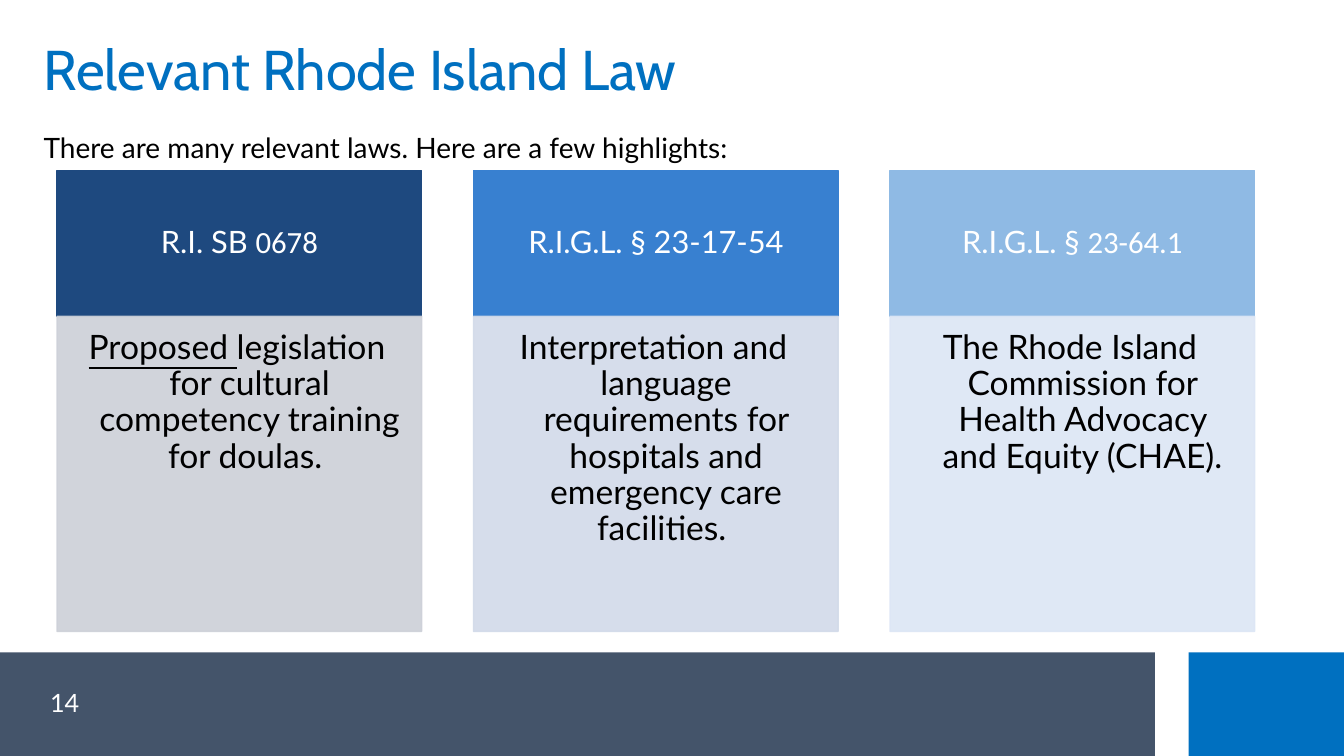
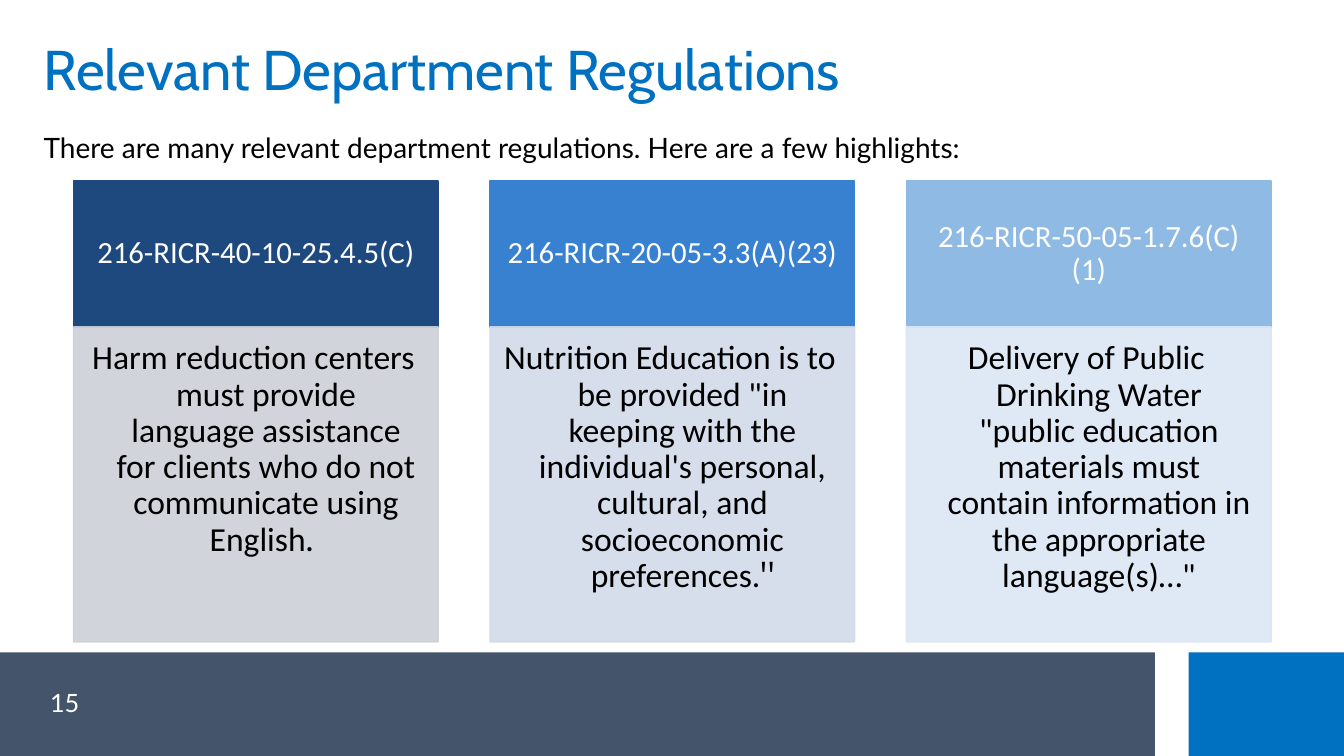
"""Build two slides of legal highlights, each with three headed cards."""
import pptx
import pptx.dml.color
import pptx.enum.shapes
import pptx.enum.text
import pptx.oxml
import pptx.oxml.ns
import pptx.util

Pt = pptx.util.Pt
RGBColor = pptx.dml.color.RGBColor
ANCHOR = pptx.enum.text.MSO_ANCHOR
ALIGN = pptx.enum.text.PP_ALIGN

WHITE = RGBColor(0xFF, 0xFF, 0xFF)
BLACK = RGBColor(0x00, 0x00, 0x00)
BLUE = RGBColor(0x00, 0x70, 0xC0)
SLATE = RGBColor(0x44, 0x54, 0x6A)
HEAD_COLORS = [
    RGBColor(0x1E, 0x49, 0x7F),
    RGBColor(0x38, 0x80, 0xD0),
    RGBColor(0x8F, 0xBA, 0xE4),
]
BODY_COLORS = [
    RGBColor(0xCD, 0xD0, 0xD8),
    RGBColor(0xD2, 0xDA, 0xE9),
    RGBColor(0xDC, 0xE6, 0xF5),
]

PLAIN, HEADING, OFFICE = "Lato", "Cabin", "Calibri"

SLIDES = [
    {
        "number": "14",
        "title": "Relevant Rhode Island Law",
        "intro": "There are many relevant laws. Here are a few highlights:",
        "origin": (40.75, 121.75),
        "cards": [
            (
                [("R.I. SB ", PLAIN), ("0678", OFFICE)],
                [
                    ("Proposed ", PLAIN, True),
                    ("legislation for cultural competency training for doulas. ", PLAIN),
                ],
            ),
            (
                [("R.I.G.L. § 23-17-54", PLAIN)],
                [(
                    "Interpretation and language requirements for hospitals "
                    "and emergency care facilities. ", PLAIN,
                )],
            ),
            (
                [("R.I.G.L. § ", PLAIN), ("23-64.1", OFFICE)],
                [(
                    "The Rhode Island Commission for Health Advocacy "
                    "and Equity (CHAE).", PLAIN,
                )],
            ),
        ],
    },
    {
        "number": "15",
        "title": "Relevant Department Regulations",
        "intro": "There are many relevant department regulations. Here are a few highlights:",
        "origin": (52.5, 129.25),
        "cards": [
            (
                [("216-RICR-40-10-25.4.5(C)", OFFICE)],
                [
                    (
                        "Harm reduction centers must provide language assistance "
                        "for clients who do not communicate using English", OFFICE,
                    ),
                    (". ", PLAIN),
                ],
            ),
            (
                [("216-RICR-20-05-3.3(A)(23)", OFFICE)],
                [
                    (
                        "Nutrition Education is to be provided \"in keeping with the "
                        "individual's personal, cultural, and socioeconomic "
                        "preferences.", OFFICE,
                    ),
                    ('"', HEADING),
                ],
            ),
            (
                [("216-RICR-50-05-1.7.6(C)(1)", OFFICE)],
                [(
                    'Delivery of Public Drinking Water "public education materials '
                    'must contain information in the appropriate language(s)…"', OFFICE,
                )],
            ),
        ],
    },
]

BANDS = [(0, 825, SLATE), (849, 111, BLUE)]
BAND_TOP, BAND_HEIGHT = 466, 74
CARD_WIDTH, CARD_STEP = 260.5, 297.5
HEAD_HEIGHT, BODY_HEIGHT = 104.25, 225
HEAD_INSETS = (12.25, 7.25, 12.25, 7.25)
BODY_INSETS = (10, 10, 13.5, 15)
BOX_INSETS = (7.2, 3.6, 7.2, 3.6)
HANGING = 18
BODY_OPACITY = 90


def set_text(shape, spans, size, color, insets=BOX_INSETS, anchor=ANCHOR.TOP,
             align=ALIGN.LEFT, spacing=1.0, hanging=0):
    frame = shape.text_frame
    frame.word_wrap = True
    frame.vertical_anchor = anchor
    frame.margin_left, frame.margin_top, frame.margin_right, frame.margin_bottom = map(Pt, insets)
    para = frame.paragraphs[0]
    para.alignment = align
    para.line_spacing = spacing
    if hanging:
        properties = para._p.get_or_add_pPr()
        properties.set("marL", str(Pt(hanging)))
        properties.set("indent", str(-Pt(hanging)))
    for text, font, *underline in spans:
        span = para.add_run()
        span.text = text
        span.font.name = font
        span.font.size = Pt(size)
        span.font.color.rgb = color
        if underline:
            span.font.underline = True


def add_box(page, area, spans, size, color, **style):
    box = page.shapes.add_textbox(*map(Pt, area))
    set_text(box, spans, size, color, **style)


def add_panel(page, area, color, outlined=False, opacity=100):
    panel = page.shapes.add_shape(pptx.enum.shapes.MSO_SHAPE.RECTANGLE, *map(Pt, area))
    panel.shadow.inherit = False
    panel.fill.solid()
    panel.fill.fore_color.rgb = color
    if outlined:
        panel.line.color.rgb = color
        panel.line.width = Pt(1)
    else:
        panel.line.fill.background()
    if opacity < 100:
        for tint in panel._element.spPr.iter(pptx.oxml.ns.qn("a:srgbClr")):
            alpha = tint.makeelement(pptx.oxml.ns.qn("a:alpha"), {"val": str(opacity * 1000)})
            tint.append(alpha)
    return panel


def add_frame(page, content):
    for left, width, color in BANDS:
        add_panel(page, (left, BAND_TOP, width, BAND_HEIGHT), color)
    add_box(page, (24, 487.5, 44.5, 26.5), [(content["number"], PLAIN)], 18, WHITE,
            align=ALIGN.CENTER)
    add_box(page, (24, 26, 912, 52), [(content["title"], HEADING)], 40, BLUE,
            anchor=ANCHOR.MIDDLE, spacing=0.9)
    add_box(page, (24, 84, 912, 67), [(content["intro"], PLAIN)], 20, BLACK, spacing=1.23)


def add_cards(page, content):
    origin_left, top = content["origin"]
    for index, (head, body) in enumerate(content["cards"]):
        left = origin_left + index * CARD_STEP
        head_panel = add_panel(page, (left, top, CARD_WIDTH, HEAD_HEIGHT),
                               HEAD_COLORS[index], outlined=True)
        set_text(head_panel, head, 22, WHITE, HEAD_INSETS, ANCHOR.MIDDLE, ALIGN.CENTER, 0.9)
        body_panel = add_panel(page, (left, top + HEAD_HEIGHT, CARD_WIDTH, BODY_HEIGHT),
                               BODY_COLORS[index], outlined=True, opacity=BODY_OPACITY)
        set_text(body_panel, body, 24, BLACK, BODY_INSETS, ANCHOR.TOP, ALIGN.CENTER, 0.9, HANGING)


def main():
    deck = pptx.Presentation()
    deck.slide_width, deck.slide_height = Pt(960), Pt(540)
    for content in SLIDES:
        page = deck.slides.add_slide(deck.slide_layouts[6])
        add_frame(page, content)
        add_cards(page, content)
    deck.save("out.pptx")


if __name__ == "__main__":
    main()
